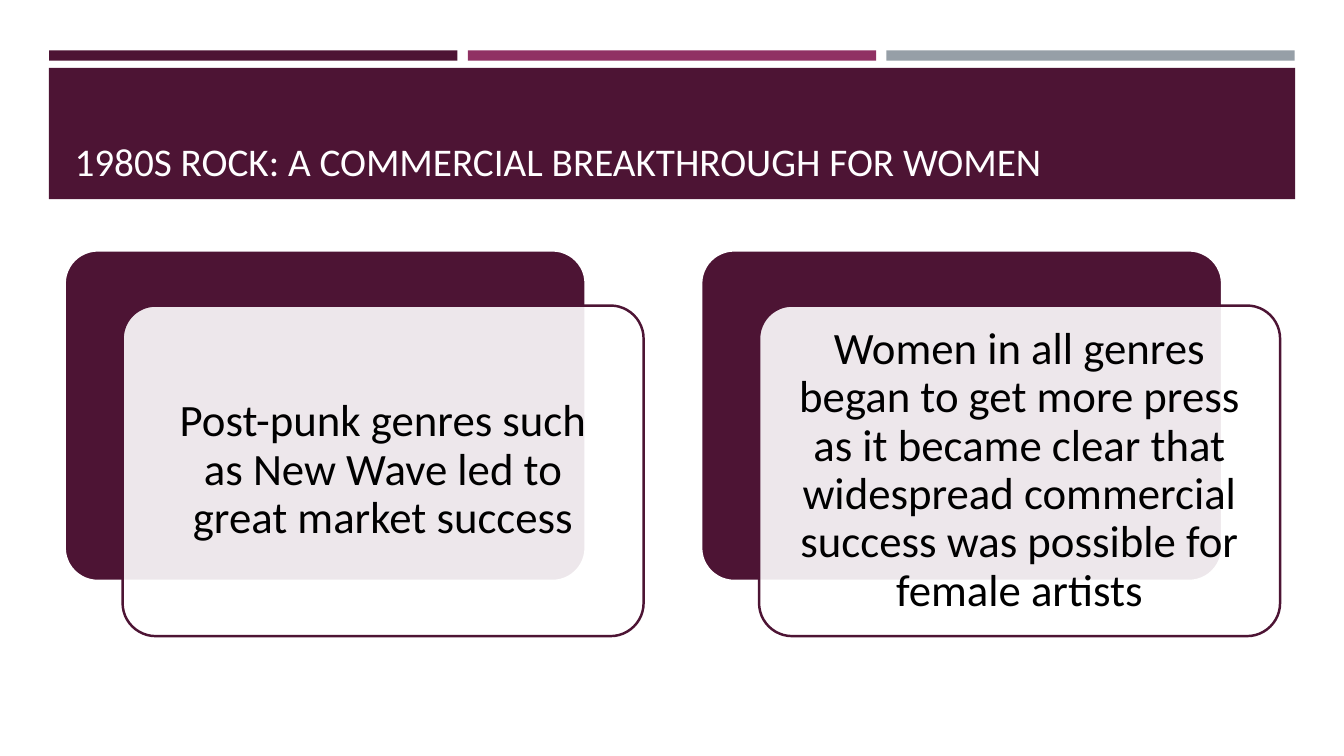
from lxml.etree import SubElement
from pptx import Presentation
from pptx.dml.color import RGBColor
from pptx.enum.shapes import MSO_SHAPE as Shape
from pptx.enum.text import MSO_ANCHOR as Anchor, PP_ALIGN as Align
from pptx.oxml.ns import qn
from pptx.util import Cm, Pt

COLORS = {"plum": "4D1434", "magenta": "903163", "gray": "969FA7",
          "white": "FFFFFF", "title": "FFFEFF", "black": "000000"}
STRIPES = ["plum", "magenta", "gray"]
POINTS = [
    "Post-punk genres such as New Wave led to great market success",
    "Women in all genres began to get more press as it became clear that "
    "widespread commercial success was possible for female artists",
]


def color(name):
    return RGBColor.from_string(COLORS[name])


def apply(target, values):
    for name, value in values.items():
        setattr(target, name, value)


class Slide:
    font = "Calibri"

    def __init__(self, deck):
        self.page = deck.slides.add_slide(deck.slide_layouts[6])

    def panel(self, kind, left, top, width, height, fill, line=None, opacity=None):
        box = self.page.shapes.add_shape(kind, Cm(left), Cm(top), Cm(width), Cm(height))
        box.shadow.inherit = False
        box.fill.solid()
        box.fill.fore_color.rgb = color(fill)
        if opacity:
            tint = box.fill._xPr.find(qn("a:solidFill"))[0]
            SubElement(tint, qn("a:alpha"), val=str(opacity * 1000))
        if line:
            box.line.color.rgb = color(line)
            box.line.width = Pt(1.75)
        else:
            box.line.fill.background()
        return box

    def rounded(self, *place, **style):
        box = self.panel(Shape.ROUNDED_RECTANGLE, *place, **style)
        box.adjustments[0] = 0.1
        return box

    def fill_text(self, box, text, size, ink, frame_format, para_format):
        frame = box.text_frame
        apply(frame, {"word_wrap": True, **frame_format})
        para = frame.paragraphs[0]
        apply(para, para_format)
        span = para.add_run()
        span.text = text
        apply(span.font, {"name": self.font, "size": Pt(size)})
        span.font.color.rgb = color(ink)

    def title(self, text, left, top, width, height):
        box = self.page.shapes.add_textbox(Cm(left), Cm(top), Cm(width), Cm(height))
        self.fill_text(box, text, 28, "title", {"vertical_anchor": Anchor.BOTTOM},
                       {"alignment": Align.LEFT, "line_spacing": 0.9})

    def card(self, text, left, top, width=13.13, height=8.33):
        """Draw a translucent text card offset over a solid one."""
        self.rounded(left, top, width, height, fill="plum", line="white")
        front = self.rounded(left + 1.46, top + 1.39, width, height,
                             fill="white", line="plum", opacity=90)
        sides = ("left", "top", "right", "bottom")
        margins = {f"margin_{side}": Cm(0.58) for side in sides}
        self.fill_text(front, text, 32, "black",
                       {"vertical_anchor": Anchor.MIDDLE, **margins},
                       {"alignment": Align.CENTER, "line_spacing": 0.9})


def main():
    deck = Presentation()
    apply(deck, {"slide_width": Cm(33.87), "slide_height": Cm(19.05)})
    slide = Slide(deck)
    for index, fill in enumerate(STRIPES):
        slide.panel(Shape.RECTANGLE, 1.24 + index * 10.55, 1.27, 10.29, 0.26, fill)
    slide.panel(Shape.RECTANGLE, 1.23, 1.71, 31.41, 3.31, "plum")
    slide.title("1980S ROCK: A COMMERCIAL BREAKTHROUGH FOR WOMEN", 1.63, 1.96, 30.63, 2.82)
    for index, text in enumerate(POINTS):
        slide.card(text, 1.63 + index * 16.04, 6.31)
    deck.save("out.pptx")


if __name__ == "__main__":
    main()
